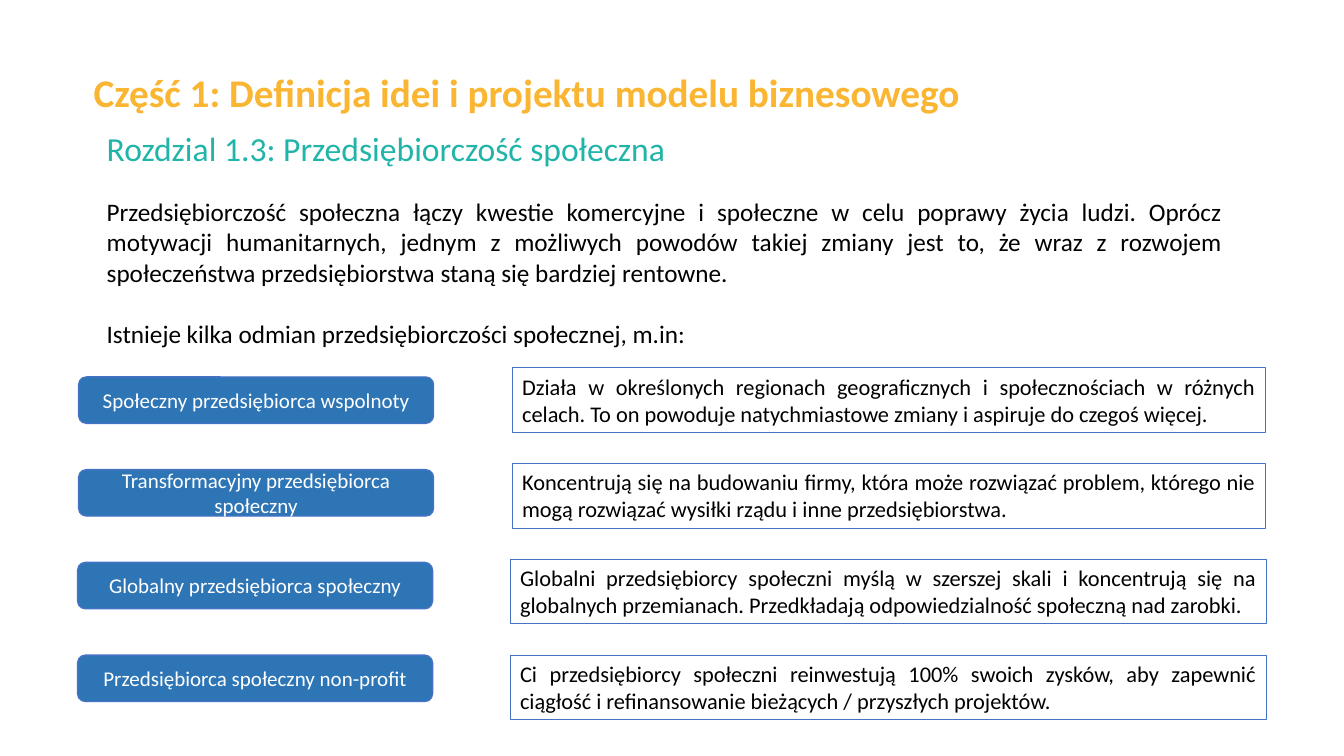
from pptx import Presentation
from pptx.dml.color import RGBColor
from pptx.enum.shapes import MSO_SHAPE as Preset
from pptx.enum.text import MSO_ANCHOR as Anchor, PP_ALIGN as Align
from pptx.util import Inches, Pt

COLORS = {"title": "FAB632", "chapter": "21B4A9", "body": "000000",
          "label": "FFFFFF", "pill": "2E75B6", "outline": "4472C4"}
FONT = "Calibri"

TITLE = "Część 1: Definicja idei i projektu modelu biznesowego"
CHAPTER = "Rozdzial 1.3: Przedsiębiorczość społeczna"
INTRO = [
    "Przedsiębiorczość społeczna łączy kwestie komercyjne i społeczne w celu poprawy życia ludzi. "
    "Oprócz motywacji humanitarnych, jednym z możliwych powodów takiej zmiany jest to, że wraz z "
    "rozwojem społeczeństwa przedsiębiorstwa staną się bardziej rentowne.",
    "Istnieje kilka odmian przedsiębiorczości społecznej, m.in:",
]
VARIETIES = [
    ("Społeczny przedsiębiorca wspolnoty",
     "Działa w określonych regionach geograficznych i społecznościach w różnych celach. "
     "To on powoduje natychmiastowe zmiany i aspiruje do czegoś więcej."),
    ("Transformacyjny przedsiębiorca społeczny",
     "Koncentrują się na budowaniu firmy, która może rozwiązać problem, którego nie mogą "
     "rozwiązać wysiłki rządu i inne przedsiębiorstwa."),
    ("Globalny przedsiębiorca społeczny",
     "Globalni przedsiębiorcy społeczni myślą w szerszej skali i koncentrują się na globalnych "
     "przemianach. Przedkładają odpowiedzialność społeczną nad zarobki."),
    ("Przedsiębiorca społeczny non-profit",
     "Ci przedsiębiorcy społeczni reinwestują 100% swoich zysków, aby zapewnić ciągłość "
     "i refinansowanie bieżących / przyszłych projektów."),
]
PILL_TOP, PILL_STEP = 3.74, 0.92
DETAIL_TOP, DETAIL_STEP = 3.65, 0.95
COLUMNS = [(0.78, 5.08, 7.47)] * 2 + [(0.77, 5.06, 7.5)] * 2


def rgb(name):
    return RGBColor.from_string(COLORS[name])


def write(shape, paragraphs, size, color, align=Align.LEFT, anchor=Anchor.TOP, bold=False, gap=0):
    frame = shape.text_frame
    frame.word_wrap = True
    frame.vertical_anchor = anchor
    for index, text in enumerate(paragraphs):
        paragraph = frame.paragraphs[0] if index == 0 else frame.add_paragraph()
        paragraph.alignment = align
        paragraph.space_before = Pt(gap if index else 0)
        run = paragraph.add_run()
        run.text = text
        run.font.name = FONT
        run.font.size = Pt(size)
        run.font.bold = bold
        run.font.color.rgb = rgb(color)


def add_text(slide, box, paragraphs, size, color, **style):
    write(slide.shapes.add_textbox(*map(Inches, box)), paragraphs, size, color, **style)


def add_box(slide, preset, box, line_width, fill=None):
    shape = slide.shapes.add_shape(preset, *map(Inches, box))
    shape.shadow.inherit = False
    if fill:
        shape.fill.solid()
        shape.fill.fore_color.rgb = rgb(fill)
    else:
        shape.fill.background()
    shape.line.color.rgb = rgb("outline")
    shape.line.width = Pt(line_width)
    return shape


def main():
    deck = Presentation()
    deck.slide_width, deck.slide_height = Inches(13.33), Inches(7.5)
    slide = deck.slides.add_slide(deck.slide_layouts[6])

    add_text(slide, (0.83, 0.63, 10.23, 0.57), [TITLE], 28, "title", bold=True)
    add_text(slide, (0.96, 1.22, 8.41, 0.5), [CHAPTER], 24, "chapter")
    add_text(slide, (0.96, 1.9, 11.26, 1.62), INTRO, 18, "body", align=Align.JUSTIFY, gap=22)

    for row, ((label, description), columns) in enumerate(zip(VARIETIES, COLUMNS)):
        pill_left, detail_left, detail_width = columns
        detail = add_box(slide, Preset.RECTANGLE,
                         (detail_left, DETAIL_TOP + row * DETAIL_STEP, detail_width, 0.64), 0.75)
        write(detail, [description], 16, "body", Align.JUSTIFY)
        pill = add_box(slide, Preset.ROUNDED_RECTANGLE,
                       (pill_left, PILL_TOP + row * PILL_STEP, 3.52, 0.46), 1, "pill")
        write(pill, [label], 15, "label", Align.CENTER, Anchor.MIDDLE)

    deck.save("out.pptx")


if __name__ == "__main__":
    main()
